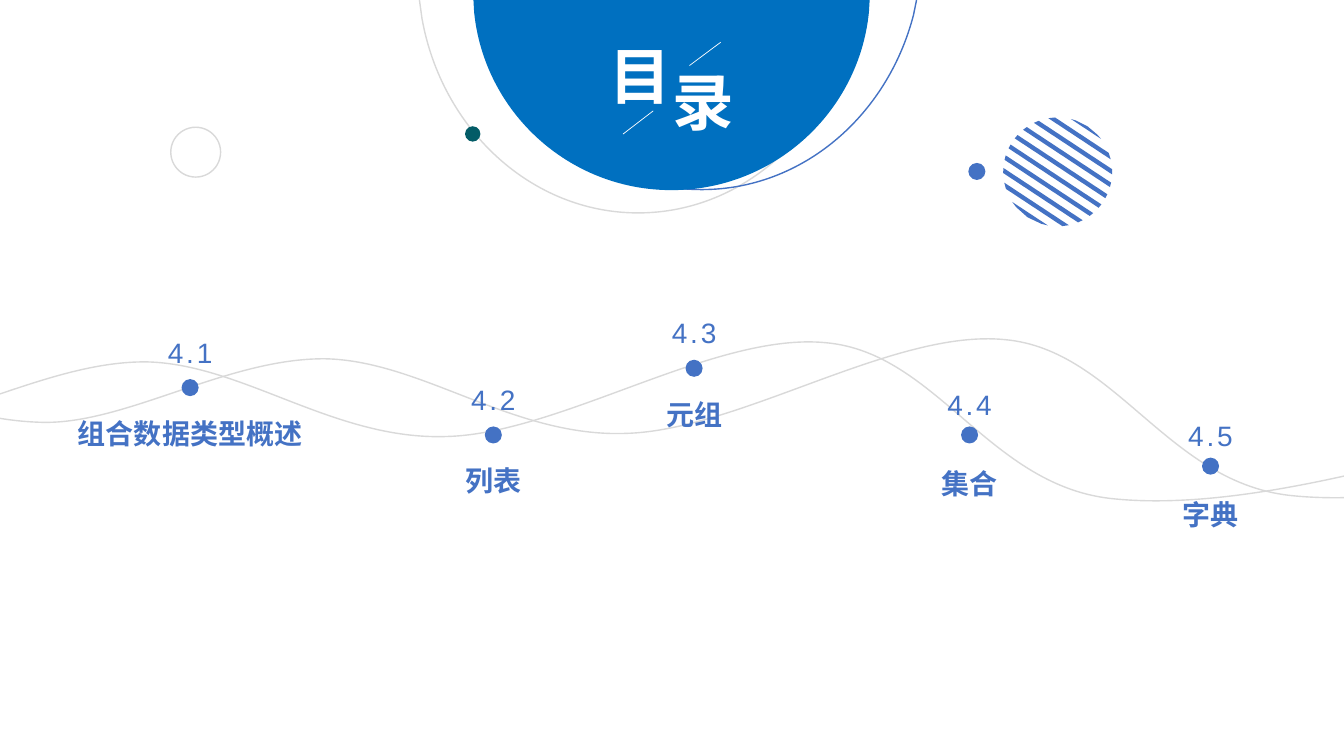
from dataclasses import dataclass
from math import sqrt

from lxml import etree
from pptx import Presentation
from pptx.dml.color import RGBColor
from pptx.enum.shapes import MSO_CONNECTOR, MSO_SHAPE
from pptx.enum.text import MSO_AUTO_SIZE, PP_ALIGN
from pptx.oxml.ns import qn
from pptx.util import Pt

OVAL = MSO_SHAPE.OVAL
STRAIGHT = MSO_CONNECTOR.STRAIGHT
CENTER = PP_ALIGN.CENTER
FIT_SHAPE = MSO_AUTO_SIZE.SHAPE_TO_FIT_TEXT

Point = tuple[float, float]
# One point is a straight step; two handles and an end point are a curve.
Segment = list[Point]


@dataclass(frozen=True)
class Theme:
    blue: str = "4472C4"
    deep_blue: str = "0070C0"
    teal: str = "035C67"
    grey: str = "D9D9D9"
    white: str = "FFFFFF"
    latin_font: str = "Arial"
    chinese_font: str = "Noto Sans CJK SC"
    heading_size: float = 44
    topic_size: float = 20
    line_width: float = 1
    stroke_width: float = 0.5


@dataclass(frozen=True)
class TextStyle:
    font: str
    size: float
    color: str
    bold: bool = False
    spacing: float = 0


@dataclass(frozen=True)
class Topic:
    number: str
    title: str
    center: float
    number_top: float
    dot_top: float
    title_top: float
    title_width: float = 54.7


@dataclass(frozen=True)
class Circle:
    left: float
    top: float
    size: float
    fill: str
    line: str | None = None


@dataclass(frozen=True)
class Cap:
    """A bowl below the top page edge; knee and handle count from its centre."""
    center: float
    half_width: float
    drop: float
    knee: Point
    handle: Point
    bottom_handle: float
    fill: str | None = None
    line: str | None = None


THEME = Theme()
HEADING = TextStyle(THEME.chinese_font, THEME.heading_size, THEME.white, bold=True)
NUMBER = TextStyle(THEME.latin_font, THEME.topic_size, THEME.blue, spacing=2)
TITLE = TextStyle(THEME.chinese_font, THEME.topic_size, THEME.blue, bold=True)

DOT_SIZE = 12.2
NUMBER_WIDTH = 46.1
TOPIC_HEIGHT = 31.7
TOPICS = [
    Topic("4.1", "组合数据类型概述", 135.8, 236.2, 270.8, 293.8, 176.4),
    Topic("4.2", "列表", 352.4, 269.6, 304.6, 327.6),
    Topic("4.3", "元组", 495.8, 221.8, 257, 280.1),
    Topic("4.4", "集合", 692.6, 273.6, 304.6, 329.8),
    Topic("4.5", "字典", 864.7, 295.2, 326.9, 352.1),
]
CIRCLES = [
    Circle(122, 90.9, 35.6, THEME.white, THEME.grey),
    Circle(691.7, 116.4, DOT_SIZE, THEME.blue),
    Circle(332.2, 90.2, 11, THEME.teal),
]
CAPS = [
    Cap(455.8, 156.2, 152.1, (154.4, 13), (140.4, 92.2), 76.3, line=THEME.grey),
    Cap(501.3, 153.4, 135.4, (151.2, 10.8), (132.5, 82.8), 71.8, line=THEME.blue),
    Cap(479.7, 141.5, 135.8, (141, 8.6), (133.9, 79.9), 73.4, fill=THEME.deep_blue),
]
WAVE_START = (-129.6, 247.7)
WAVE = [
    [(-79.9, 273.6), (-30.2, 300.2), (30.2, 301.7)],
    [(90, 303.1), (162.7, 255.6), (232.6, 256.3)],
    [(301.7, 257.8), (366.5, 312.5), (447.1, 309.6)],
    [(528.5, 307.4), (638.6, 234.7), (717.8, 242.6)],
    [(797.8, 249.8), (834.5, 346.3), (924.5, 354.2)],
    [(1014.5, 362.9), (1136.2, 327.6), (1257.1, 292.3)],
]
WAVE_OFFSETS = [(0, 0), (-127.8, 2.2)]
HEADING_WIDTH, HEADING_HEIGHT = 59, 60.5
HEADING_CHARACTERS = [("目", 427.7, 23.8), ("录", 472.6, 41.8)]
HEADING_STROKES = [((445, 95.8), (466.6, 79.2)), ((492.5, 46.8), (514.8, 30.2))]


def paint(shape, fill: str | None, line: str | None) -> None:
    shape.shadow.inherit = False
    if fill:
        shape.fill.solid()
        shape.fill.fore_color.rgb = RGBColor.from_string(fill)
    else:
        shape.fill.background()
    if line:
        shape.line.color.rgb = RGBColor.from_string(line)
        shape.line.width = Pt(THEME.line_width)
    else:
        shape.line.fill.background()


def add_polygons(page, contours: list[list[Point]], closed: bool):
    scaled = [[(Pt(x), Pt(y)) for x, y in contour] for contour in contours]
    builder = page.shapes.build_freeform(*scaled[0][0])
    for index, contour in enumerate(scaled):
        if index:
            builder.move_to(*contour[0])
        builder.add_line_segments(contour[1:], close=closed)
    return builder.convert_to_shape()


def add_curve(page, start: Point, segments: list[Segment],
              fill: str | None = None, line: str | None = None) -> None:
    """Lay straight steps between the end points, then bend those with handles."""
    ends = [start] + [segment[-1] for segment in segments]
    shape = add_polygons(page, [ends], closed=fill is not None)
    steps = list(shape._element.iter(qn("a:lnTo")))
    for step, segment in zip(steps, segments):
        if len(segment) == 1:
            continue
        step.tag = qn("a:cubicBezTo")
        for index, (x, y) in enumerate(segment[:-1]):
            handle = etree.Element(qn("a:pt"))
            handle.set("x", str(Pt(x) - shape.left))
            handle.set("y", str(Pt(y) - shape.top))
            step.insert(index, handle)
    paint(shape, fill, line)


def add_wave(page, shift_x: float, shift_y: float) -> None:
    def move(point: Point) -> Point:
        return point[0] + shift_x, point[1] + shift_y

    segments = [[move(point) for point in segment] for segment in WAVE]
    add_curve(page, move(WAVE_START), segments, line=THEME.grey)


def add_cap(page, cap: Cap) -> None:
    def at(offset: float, y: float) -> Point:
        return cap.center + offset, y

    (knee_x, knee_y), (handle_x, handle_y) = cap.knee, cap.handle
    segments = [
        [at(knee_x, knee_y)],
        [at(handle_x, handle_y), at(cap.bottom_handle, cap.drop), at(0, cap.drop)],
        [at(-cap.bottom_handle, cap.drop), at(-handle_x, handle_y), at(-knee_x, knee_y)],
        [at(-cap.half_width, 0)],
    ]
    add_curve(page, at(cap.half_width, 0), segments, cap.fill, cap.line)


def add_striped_disc(page) -> None:
    """Cut level stripes from a disc, then tilt the whole shape."""
    center_x, center_y, radius = 755.5, 122.8, 38.9
    pitch, thickness, first_top, count = 8.4, 3.1, -39.8, 10
    stripes = []
    for index in range(count):
        top = max(first_top + index * pitch, -radius)
        bottom = min(first_top + index * pitch + thickness, radius)
        levels = [top, bottom]
        if index in (0, count - 1):
            levels.insert(1, (top + bottom) / 2)
        chords = [(sqrt(radius ** 2 - y ** 2), y) for y in levels]
        right = [(center_x + half, center_y + y) for half, y in chords]
        left = [(center_x - half, center_y + y) for half, y in reversed(chords) if half]
        stripes.append(right + left)
    disc = add_polygons(page, stripes, closed=True)
    paint(disc, THEME.blue, None)
    disc.rotation = 33.4


def add_circle(page, circle: Circle) -> None:
    shape = page.shapes.add_shape(OVAL, Pt(circle.left), Pt(circle.top),
                                  Pt(circle.size), Pt(circle.size))
    paint(shape, circle.fill, circle.line)


def add_text(shapes, text: str, left: float, top: float, width: float,
             height: float, style: TextStyle) -> None:
    box = shapes.add_textbox(Pt(left), Pt(top), Pt(width), Pt(height))
    box.text_frame.word_wrap = False
    box.text_frame.auto_size = FIT_SHAPE
    para = box.text_frame.paragraphs[0]
    para.alignment = CENTER
    span = para.add_run()
    span.text = text
    span.font.name = style.font
    span.font.size = Pt(style.size)
    span.font.bold = style.bold
    span.font.color.rgb = RGBColor.from_string(style.color)
    properties = span.font._element
    if style.spacing:
        properties.set("spc", str(int(style.spacing * 100)))
    etree.SubElement(properties, qn("a:ea")).set("typeface", style.font)


def add_heading(page) -> None:
    group = page.shapes.add_group_shape()
    for character, left, top in HEADING_CHARACTERS:
        add_text(group.shapes, character, left, top, HEADING_WIDTH, HEADING_HEIGHT, HEADING)
    for begin, end in HEADING_STROKES:
        stroke = group.shapes.add_connector(STRAIGHT, *map(Pt, begin + end))
        stroke.line.color.rgb = RGBColor.from_string(THEME.white)
        stroke.line.width = Pt(THEME.stroke_width)
        etree.SubElement(stroke._element.spPr, qn("a:effectLst"))


def add_topic(page, topic: Topic) -> None:
    add_circle(page, Circle(topic.center - DOT_SIZE / 2, topic.dot_top, DOT_SIZE, THEME.blue))
    for text, top, width, style in (
        (topic.number, topic.number_top, NUMBER_WIDTH, NUMBER),
        (topic.title, topic.title_top, topic.title_width, TITLE),
    ):
        add_text(page.shapes, text, topic.center - width / 2, top, width, TOPIC_HEIGHT, style)


def main() -> None:
    deck = Presentation()
    deck.slide_width, deck.slide_height = Pt(960), Pt(540)
    page = deck.slides.add_slide(deck.slide_layouts[6])
    for offset in WAVE_OFFSETS:
        add_wave(page, *offset)
    for cap in CAPS:
        add_cap(page, cap)
    add_striped_disc(page)
    add_heading(page)
    for circle in CIRCLES:
        add_circle(page, circle)
    for topic in TOPICS:
        add_topic(page, topic)
    deck.save("out.pptx")


if __name__ == "__main__":
    main()
